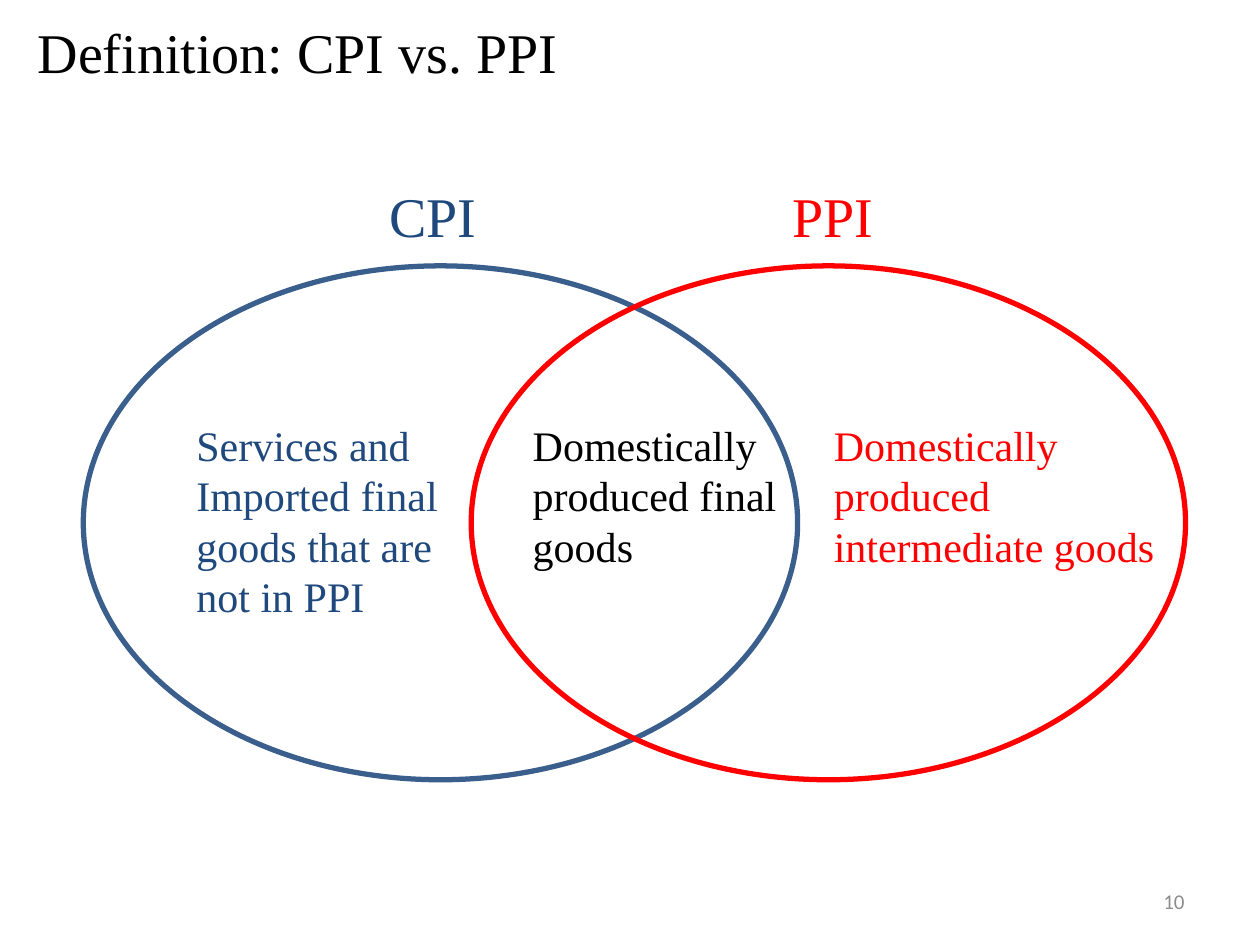
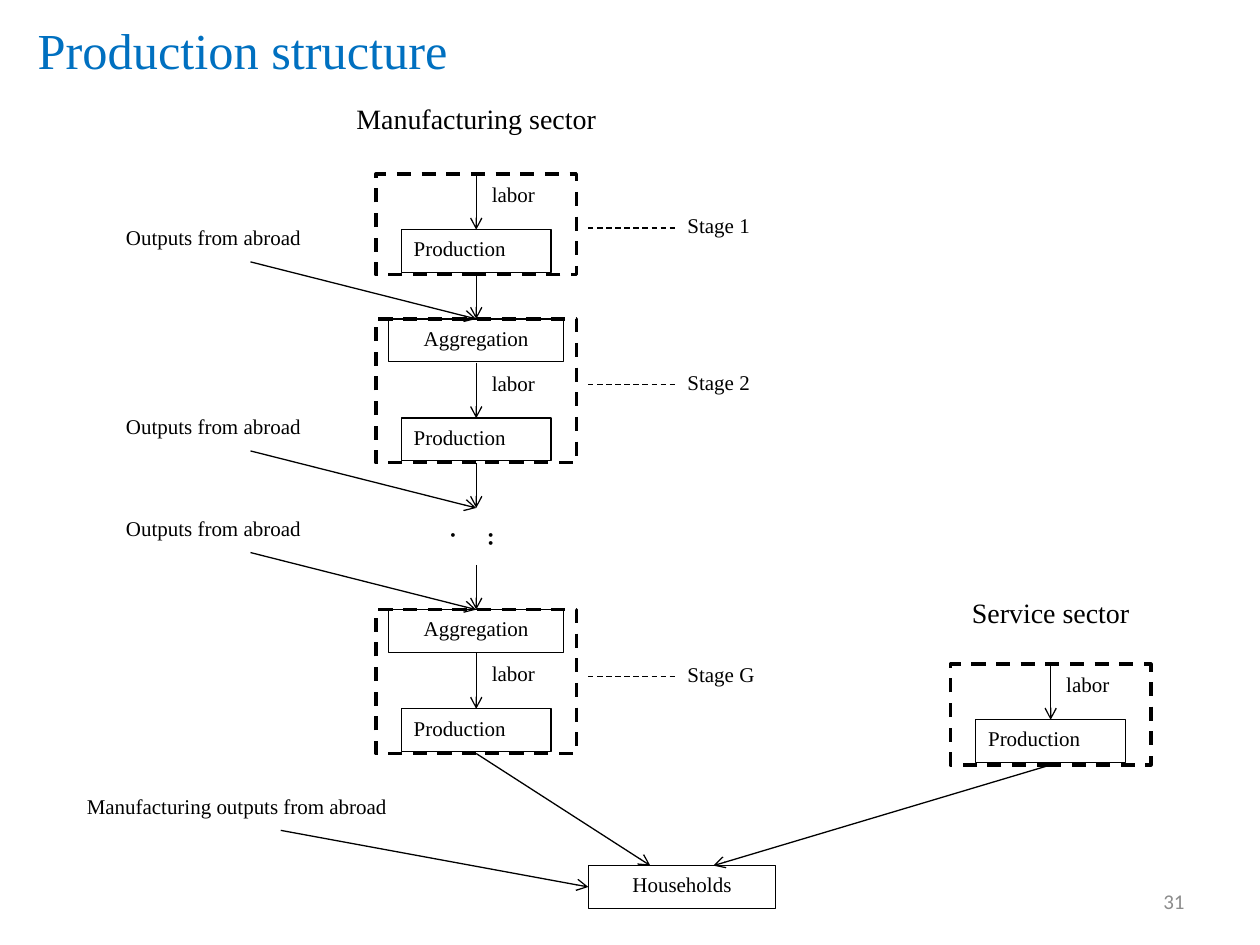
from pptx import Presentation
from pptx.dml.color import RGBColor
from pptx.enum.dml import MSO_LINE as Dash
from pptx.enum.shapes import MSO_CONNECTOR as Conn, MSO_SHAPE as Kind
from pptx.enum.text import MSO_ANCHOR as Anchor, PP_ALIGN as Align
from pptx.oxml.ns import qn
from pptx.util import Cm, Pt
from lxml.etree import SubElement

BLACK = RGBColor(0x00, 0x00, 0x00)
NAVY = RGBColor(0x1F, 0x49, 0x7D)
STEEL = RGBColor(0x3A, 0x5F, 0x8C)
RED = RGBColor(0xFF, 0x00, 0x00)
BLUE = RGBColor(0x00, 0x70, 0xC0)
GRAY = RGBColor(0x8C, 0x8C, 0x8C)
SERIF = "Times New Roman"
SANS = "Calibri"
MAIN = 9.6
SIDE = 21.18
ROW = 0.86


class Deck:
    def __init__(self):
        self.prs = Presentation()
        self.prs.slide_width = Cm(25.4)
        self.prs.slide_height = Cm(19.05)
        self.slide = None

    def page(self, title, color, size, box, num):
        self.slide = self.prs.slides.add_slide(self.prs.slide_layouts[6])
        self.text(title, *box, size=size, color=color, anchor=Anchor.MIDDLE)
        self.text(num, 18.21, 17.65, 5.92, 1.02, color=GRAY, font=SANS,
                  align=Align.RIGHT, anchor=Anchor.MIDDLE)

    def fill(self, frame, words, size=12, color=BLACK, font=SERIF,
             align=Align.LEFT, anchor=Anchor.TOP):
        frame.word_wrap = True
        frame.vertical_anchor = anchor
        for i, line in enumerate(words.split("\n")):
            para = frame.add_paragraph() if i else frame.paragraphs[0]
            para.alignment = align
            run = para.add_run()
            run.text = line
            run.font.size = Pt(size)
            run.font.name = font
            run.font.color.rgb = color

    def text(self, words, x, y, w, h=ROW, **style):
        box = self.slide.shapes.add_textbox(Cm(x), Cm(y), Cm(w), Cm(h))
        self.fill(box.text_frame, words, **style)
        return box

    def shape(self, kind, x, y, w, h, color=BLACK, width=0.75, dash=None):
        item = self.slide.shapes.add_shape(kind, Cm(x), Cm(y), Cm(w), Cm(h))
        item.shadow.inherit = False
        item.fill.background()
        item.line.color.rgb = color
        item.line.width = Pt(width)
        if dash:
            item.line.dash_style = dash
        return item

    def node(self, words, mid, y, w, align=Align.CENTER):
        item = self.shape(Kind.RECTANGLE, mid - w / 2, y, w, ROW)
        self.fill(item.text_frame, words, align=align)

    def line(self, x1, y1, x2, y2, dash=None, arrow=True):
        item = self.slide.shapes.add_connector(
            Conn.STRAIGHT, Cm(x1), Cm(y1), Cm(x2), Cm(y2))
        item.line.color.rgb = BLACK
        item.line.width = Pt(0.75)
        if dash:
            item.line.dash_style = dash
        if arrow:
            SubElement(item.line._get_or_add_ln(), qn("a:tailEnd"), type="arrow")
        SubElement(item._element.spPr, qn("a:effectLst"))

    def frame(self, mid, y, h):
        self.shape(Kind.RECTANGLE, mid - 2.02, y, 4.04, h, width=2, dash=Dash.DASH)

    def core(self, mid, y):
        self.text("labor", mid - 0.76, y + 0.03, 3.02, align=Align.CENTER)
        self.line(mid, y, mid, y + 1.12)
        self.node("Production", mid, y + 1.12, 3.02, Align.LEFT)

    def first(self, mid, y):
        self.frame(mid, y, 2.03)
        self.core(mid, y)

    def later(self, mid, y):
        self.frame(mid, y, 2.9)
        self.node("Aggregation", mid, y, 3.53)
        self.core(mid, y + 0.88)

    def stage(self, name, y):
        self.line(11.86, y, 13.61, y, dash=Dash.DASH, arrow=False)
        self.text(name, 13.61, y - 0.43, 2.77)

    def inflow(self, y):
        self.text("Outputs from abroad", 2.29, y - 2.02, 5.54)
        self.line(5.05, y - 1.15, MAIN, y)
        self.line(MAIN, y - 0.9, MAIN, y)

    def sector(self, name, mid, y):
        self.text(name, mid - 3.53, y, 7.06, 1.07, size=16, align=Align.CENTER)


def venn(deck):
    deck.page("Definition: CPI vs. PPI", BLACK, 32, (0.51, -0.08, 23.65, 2.24), "10")
    for x, color in ((1.68, STEEL), (9.5, RED)):
        deck.shape(Kind.OVAL, x, 5.36, 14.4, 10.36, color, 3)
    for name, x, w, color in (("CPI", 7.14, 3.18, NAVY), ("PPI", 15.49, 2.59, RED)):
        deck.text(name, x, 3.53, w, 1.63, size=32, color=color, align=Align.CENTER)
    for words, x, w, h, color in (
        ("Services and\nImported final goods that are not in PPI", 3.71, 5.82, 4.37, NAVY),
        ("Domestically produced intermediate goods", 16.56, 7.52, 3.33, RED),
        ("Domestically produced final goods", 10.49, 5.56, 3.33, BLACK),
    ):
        deck.text(words, x, 8.33, w, h, size=24, color=color)


def flow(deck):
    deck.page("Production structure", BLUE, 28.8, (0.51, 0.3, 22.86, 1.4), "31")
    deck.sector("Manufacturing sector", MAIN, 1.93)
    deck.sector("Service sector", SIDE, 11.89)
    for mid, y in ((MAIN, 3.51), (SIDE, 13.39)):
        deck.first(mid, y)
    for y in (6.43, 12.29):
        deck.later(MAIN, y)
    for name, y in (("Stage 1", 4.6), ("Stage 2", 7.75), ("Stage G", 13.64)):
        deck.stage(name, y)
    for y in (6.43, 10.24, 12.29):
        deck.inflow(y)
    dots = deck.text("...", 8.99, 10.46, 1.63, 0.89, size=18, font=SANS)
    dots.text_frame._txBody.bodyPr.set("vert", "eaVert")
    deck.text("Manufacturing outputs from abroad", 1.5, 15.88, 8.33)
    deck.node("Households", 13.75, 17.45, 3.78)
    for ends in ((MAIN, 15.19, 13.11, 17.45), (SIDE, 15.42, 14.38, 17.45),
                 (5.66, 16.74, 11.86, 17.88)):
        deck.line(*ends)


def main():
    deck = Deck()
    venn(deck)
    flow(deck)
    deck.prs.save("out.pptx")


if __name__ == "__main__":
    main()
